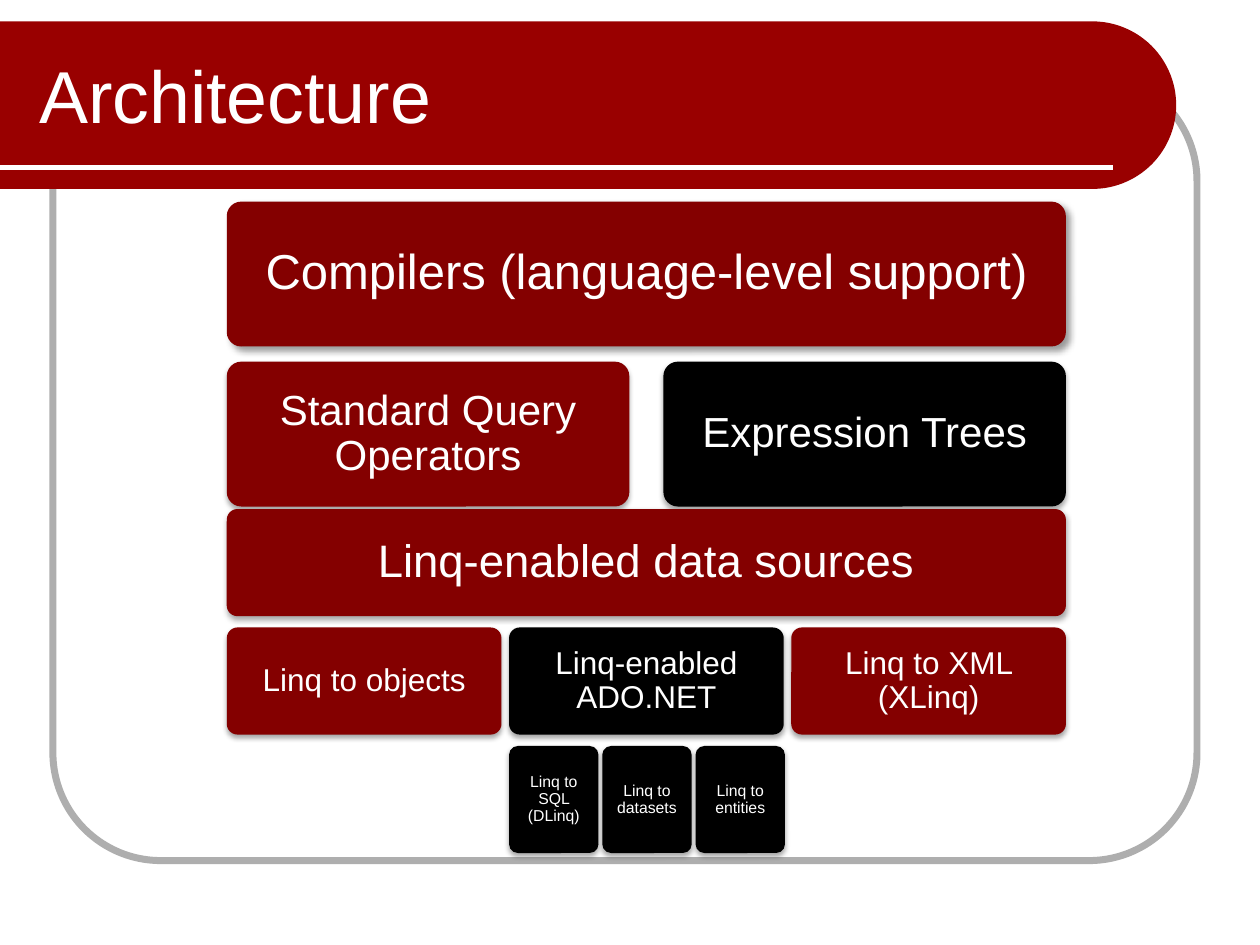
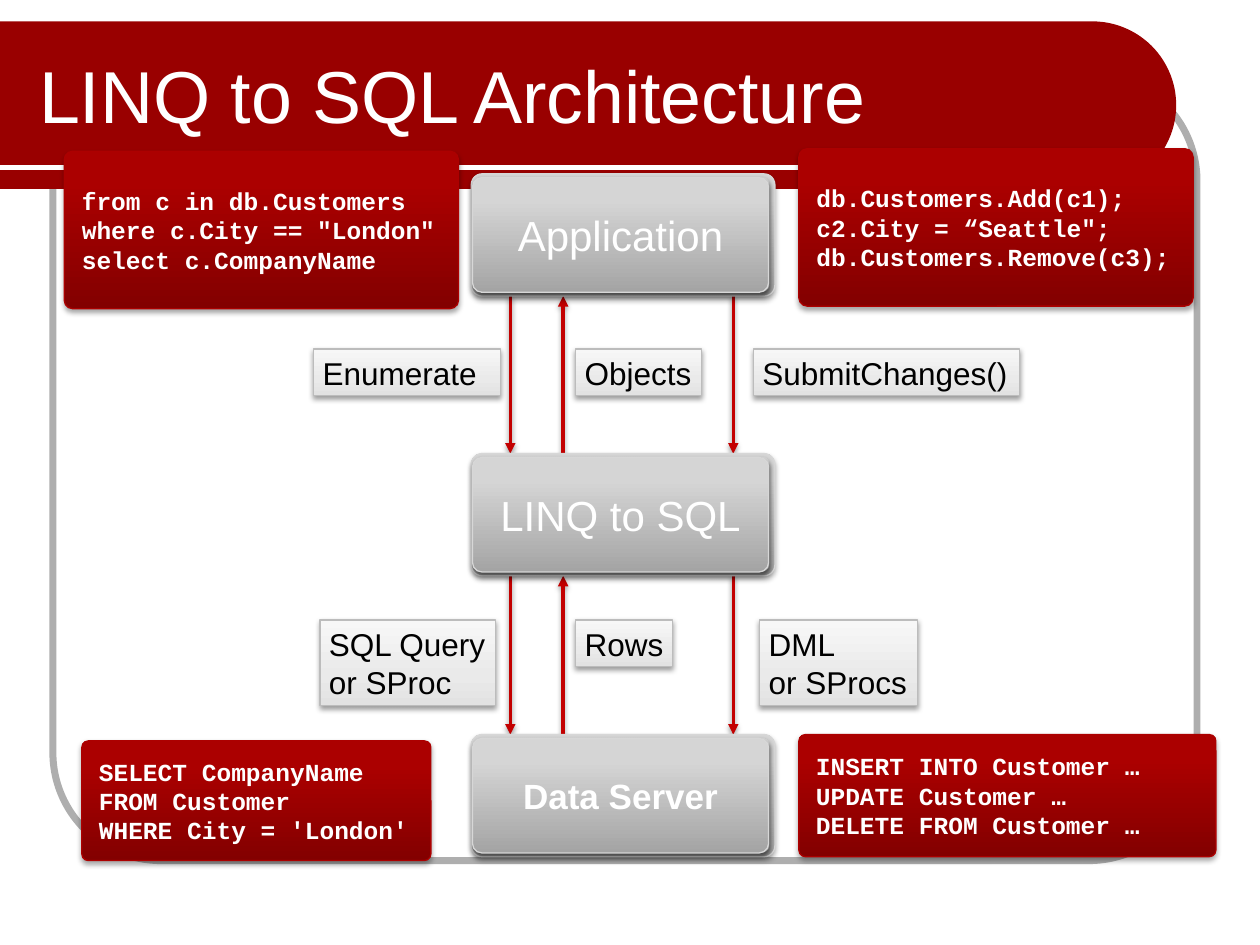
import math
from lxml import etree
from pptx import Presentation
from pptx import util as u
from pptx.dml.color import RGBColor
from pptx.enum import shapes, text
from pptx.oxml import parse_xml
from pptx.oxml.ns import nsdecls, qn

# ---- Shared look ----
COLORS = {
    "band": "990000", "frame": "AEAEAE", "white": "FFFFFF", "black": "000000",
    "block": "840000", "arrow": "C30000",
}
# style: gradient stops from bottom to top, and outline
GRADIENTS = {
    "node": ([(0, "A4A4A4"), (80, "D5D5D5"), (100, "D6D6D6")], "D7D7D7"),
    "code": ([(0, "830000"), (80, "AB0000"), (100, "AB0000")], "AC0000"),
    "label": ([(0, "E2E2E2"), (35, "EAEAEA"), (100, "F7F7F7")], "BCBCBC"),
}
# opacity %, blur pt, distance pt, direction in degrees
SHADOWS = {"box": (35, 3.1, 1.8, 90), "top": (40, 4, 3, 45), "line": (38, 3.1, 1.6, 90)}
SANS, MONO = "Arial", "Courier New"
ROUND = shapes.MSO_SHAPE.ROUNDED_RECTANGLE
RECT = shapes.MSO_SHAPE.RECTANGLE

# ---- Slide 1: the stack of layers ----
STACK_LEFT, STACK_WIDTH = 1.8, 6.66
MIDDLE_LEFT, MIDDLE_WIDTH = 4.04, 2.19
# left, total width, top, height, gap, text size, shadow, [(words, colour)]
LAYERS = [
    (STACK_LEFT, STACK_WIDTH, 1.6, 1.15, 0, 28, "top",
     [("Compilers (language-level support)", "block")]),
    (STACK_LEFT, STACK_WIDTH, 2.87, 1.15, 0.27, 24, "box",
     [("Standard Query Operators", "block"), ("Expression Trees", "black")]),
    (STACK_LEFT, STACK_WIDTH, 4.04, 0.85, 0, 26, "box",
     [("Linq-enabled data sources", "block")]),
    (STACK_LEFT, STACK_WIDTH, 4.98, 0.85, 0.06, 18, "box",
     [("Linq to objects", "block"), ("Linq-enabled ADO.NET", "black"),
      ("Linq to XML (XLinq)", "block")]),
    (MIDDLE_LEFT, MIDDLE_WIDTH, 5.92, 0.85, 0.03, 9, "box",
     [("Linq to SQL (DLinq)", "black"), ("Linq to datasets", "black"),
      ("Linq to entities", "black")]),
]

# ---- Slide 2: application, mapper and database ----
NODE_LEFT, NODE_WIDTH, NODE_HEIGHT = 3.74, 2.41, 0.97
# top, words, size, bold
NODES = [
    (1.38, "Application", 24, False),
    (3.6, "LINQ to SQL", 24, False),
    (5.83, "Data Server", 20, True),
]
# plates of one node: x offset, y offset, width, height, corner
PLATES = [
    (0, 0, NODE_WIDTH, NODE_HEIGHT, 0.09),
    (0.04, 0.03, 2.32, 0.9, 0.054),
    (0.01, 0.03, 2.35, 0.91, 0.083),
]
ARROWS = [(5.82, "down"), (4.47, "up"), (4.05, "down")]
CODE = [
    ((0.51, 1.2, 3.13, 1.25),
     ["from c in db.Customers", 'where c.City == "London"', "select c.CompanyName"]),
    ((0.65, 5.88, 2.77, 0.95),
     ["SELECT CompanyName", "FROM Customer", "WHERE City = 'London'"]),
    ((6.34, 1.18, 3.13, 1.25),
     ["db.Customers.Add(c1);", 'c2.City = “Seattle";', "db.Customers.Remove(c3);"]),
    ((6.34, 5.83, 3.31, 0.97),
     ["INSERT INTO Customer …", "UPDATE Customer …", "DELETE FROM Customer …"]),
]
UPPER, LOWER = 2.77, 4.92
LABELS = [
    ((2.49, UPPER, 1.48, 0.37), ["Enumerate"]),
    ((4.57, UPPER, 1, 0.37), ["Objects"]),
    ((5.98, UPPER, 2.11, 0.37), ["SubmitChanges()"]),
    ((2.54, LOWER, 1.39, 0.68), ["SQL Query", "or SProc"]),
    ((4.57, LOWER, 0.77, 0.37), ["Rows"]),
    ((6.03, LOWER, 1.25, 0.68), ["DML", "or SProcs"]),
]


# ---- Helpers ----
def rgb(name):
    return RGBColor.from_string(COLORS.get(name, name))


def add_shadow(sp, kind=None):
    """Replace the theme shadow with the named one, or with none."""
    spPr = sp._element.spPr
    for old in spPr.findall(qn("a:effectLst")):
        spPr.remove(old)
    effects = etree.SubElement(spPr, qn("a:effectLst"))
    if kind:
        alpha, blur, dist, angle = SHADOWS[kind]
        effects.append(parse_xml(
            f'<a:outerShdw {nsdecls("a")} blurRad="{u.Pt(blur)}" dist="{u.Pt(dist)}" '
            f'dir="{angle * 60000}" algn="ctr" rotWithShape="0"><a:srgbClr val="000000">'
            f'<a:alpha val="{alpha * 1000}"/></a:srgbClr></a:outerShdw>'))


def add_box(s, preset, box, corner=None, fill=None, style=None, shadow=None):
    sp = s.shapes.add_shape(preset, *map(u.Inches, box))
    if corner is not None:
        sp.adjustments[0] = corner
    if style:
        stops, outline = GRADIENTS[style]
        sp.fill.gradient()
        sp.fill.gradient_angle = 90
        stop_list = sp._element.spPr.find(qn("a:gradFill")).find(qn("a:gsLst"))
        for old in list(stop_list):
            stop_list.remove(old)
        for pos, color in stops:
            stop = etree.SubElement(stop_list, qn("a:gs"), pos=str(pos * 1000))
            etree.SubElement(stop, qn("a:srgbClr"), val=color)
        sp.line.color.rgb = rgb(outline)
        sp.line.width = u.Pt(0.75)
    else:
        if fill:
            sp.fill.solid()
            sp.fill.fore_color.rgb = rgb(fill)
        else:
            sp.fill.background()
        sp.line.fill.background()
    add_shadow(sp, shadow)
    return sp


def add_line(s, start, end, color, width):
    line = s.shapes.add_connector(shapes.MSO_CONNECTOR.STRAIGHT,
                                  *map(u.Inches, (*start, *end)))
    line.line.color.rgb = rgb(color)
    line.line.width = u.Pt(width)
    return line


def write(sp, lines, size, color="white", font=SANS, bold=False, insets=None,
          align=text.PP_ALIGN.LEFT, anchor=text.MSO_ANCHOR.MIDDLE, spacing=None):
    tf = sp.text_frame
    tf.word_wrap = True
    tf.auto_size = text.MSO_AUTO_SIZE.NONE
    tf.vertical_anchor = anchor
    if insets:
        (tf.margin_left, tf.margin_top,
         tf.margin_right, tf.margin_bottom) = map(u.Inches, insets)
    for i, words in enumerate(lines):
        p = tf.add_paragraph() if i else tf.paragraphs[0]
        p.alignment = align
        if spacing:
            p.line_spacing = spacing
        r = p.add_run()
        r.text = words
        r.font.name = font
        r.font.size = u.Pt(size)
        r.font.bold = bold
        r.font.color.rgb = rgb(color)


def add_slide(prs, title):
    """A slide with the rounded frame, the red band and its title."""
    s = prs.slides.add_slide(prs.slide_layouts[5])
    frame = add_box(s, ROUND, (0.42, 0.58, 9.08, 6.25), 0.137)
    frame.line.color.rgb = rgb("frame")
    frame.line.width = u.Pt(4)

    # Band with a half-round right end
    top, bottom, arc_x = 0.17, 1.5, 8.67
    radius = (bottom - top) / 2
    arc = [(arc_x + radius * math.cos(math.radians(a)),
            top + radius + radius * math.sin(math.radians(a)))
           for a in range(-90, 91, 3)]
    outline = s.shapes.build_freeform(0, u.Inches(top))
    outline.add_line_segments([(u.Inches(x), u.Inches(y)) for x, y in arc + [(0, bottom)]])
    band = outline.convert_to_shape()
    band.fill.solid()
    band.fill.fore_color.rgb = rgb("band")
    band.line.fill.background()
    add_shadow(band)
    add_shadow(add_line(s, (0, 1.33), (8.83, 1.33), "white", 3))

    # Title, brought in front of the band
    sp = s.shapes.title
    sp.left, sp.top, sp.width, sp.height = map(u.Inches, (0.21, 0.25, 7.79, 1))
    write(sp, [title], 42)
    sp._element.getparent().append(sp._element)
    return s


# ---- Slides ----
def layers_slide(prs):
    s = add_slide(prs, "Architecture")
    for left, total, top, height, gap, size, shadow, blocks in LAYERS:
        width = (total - gap * (len(blocks) - 1)) / len(blocks)
        for i, (words, color) in enumerate(blocks):
            box = (left + i * (width + gap), top, width, height)
            sp = add_box(s, ROUND, box, 0.1, fill=color, shadow=shadow)
            write(sp, [words], size, insets=[size / 130] * 4,
                  align=text.PP_ALIGN.CENTER, spacing=0.9)


def flow_slide(prs):
    s = add_slide(prs, "LINQ to SQL Architecture")

    # Arrows between neighbouring nodes
    for upper, lower in zip(NODES, NODES[1:]):
        for x, direction in ARROWS:
            ends = [(x, upper[0] + NODE_HEIGHT), (x, lower[0])]
            if direction == "up":
                ends.reverse()
            line = add_line(s, *ends, "arrow", 2)
            etree.SubElement(line.line._get_or_add_ln(), qn("a:tailEnd"), type="triangle")
            add_shadow(line, "line")

    # Nodes, each a pile of plates with the words on the last
    for top, words, size, bold in NODES:
        for dx, dy, width, height, corner in PLATES:
            sp = add_box(s, ROUND, (NODE_LEFT + dx, top + dy, width, height),
                         corner, style="node", shadow="box")
        write(sp, [words], size, bold=bold, insets=(0.12, 0.06, 0.12, 0.06),
              align=text.PP_ALIGN.CENTER)

    # Code samples and arrow labels
    for box, lines in CODE:
        sp = add_box(s, ROUND, box, 0.054, style="code", shadow="box")
        write(sp, lines, 14, font=MONO, bold=True, insets=(0.12, 0.06, 0.06, 0.06))
    for box, lines in LABELS:
        sp = add_box(s, RECT, box, style="label", shadow="line")
        write(sp, lines, 18, "black", insets=(0.07, 0.04, 0, 0.04),
              anchor=text.MSO_ANCHOR.TOP)


def main():
    prs = Presentation()
    prs.slide_width, prs.slide_height = u.Inches(10), u.Inches(7.5)
    layers_slide(prs)
    flow_slide(prs)
    prs.save("out.pptx")


if __name__ == "__main__":
    main()
